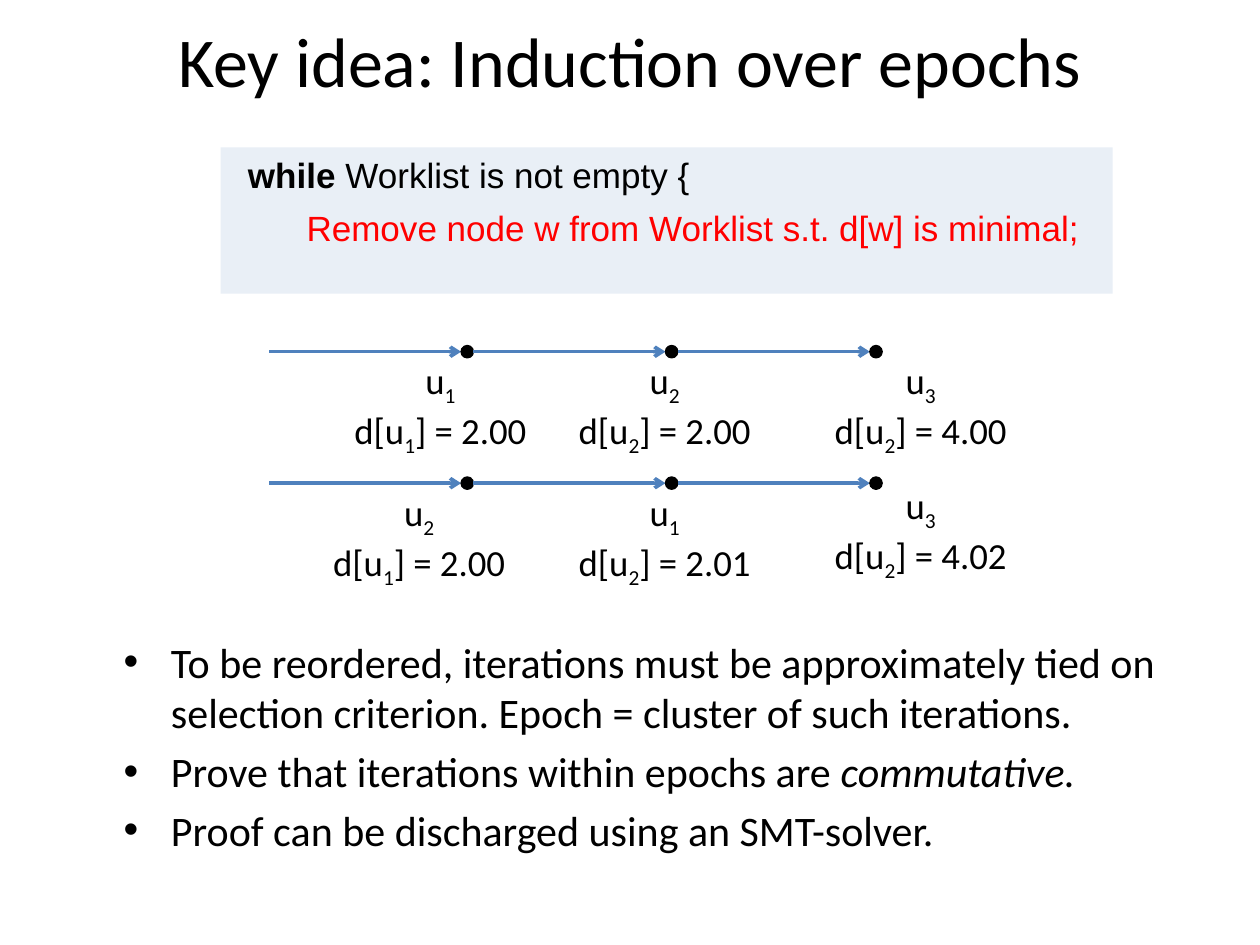
from dataclasses import dataclass
from typing import Any

from lxml import etree
from pptx import Presentation
from pptx import util as u
from pptx.dml import color as c
from pptx.enum import shapes as kinds
from pptx.enum import text as t
from pptx.oxml import ns

BLACK = c.RGBColor(0x00, 0x00, 0x00)
RED = c.RGBColor(0xFF, 0x00, 0x00)
BLUE = c.RGBColor(0x4F, 0x81, 0xBD)
PALE_BLUE = c.RGBColor(0xDC, 0xE6, 0xF2)

FIRST_NODE = 9.42
NODE_PITCH = 4.12
DOT_SIZE = 0.25
LABEL_WIDTH = 4.04
LABEL_HEIGHT = 2.06


@dataclass(frozen=True)
class Iteration:
    node: str
    distance_node: str
    distance: str
    left: float
    top: float


@dataclass(frozen=True)
class Epoch:
    axis: float
    iterations: tuple[Iteration, ...]


@dataclass(frozen=True)
class CodeLine:
    indent: float
    runs: tuple[tuple[str, dict[str, Any]], ...]


EPOCHS = (
    Epoch(7.09, (
        Iteration("1", "1", "2.00", 6.86, 7.09),
        Iteration("2", "2", "2.00", 11.38, 7.09),
        Iteration("3", "2", "4.00", 16.54, 7.09),
    )),
    Epoch(9.74, (
        Iteration("2", "1", "2.00", 6.43, 9.74),
        Iteration("1", "2", "2.01", 11.38, 9.74),
        Iteration("3", "2", "4.02", 16.54, 9.6),
    )),
)

CODE = (
    CodeLine(1.27, (("while ", {"bold": True}), ("Worklist is not empty {", {}))),
    CodeLine(2.45, (("Remove node w from Worklist s.t. d[w] is minimal;", {"color": RED}),)),
)

BULLETS = (
    (("To be reordered, iterations must be approximately tied on selection criterion. "
      "Epoch = cluster of such iterations.", {}),),
    (("Prove that iterations within epochs are ", {}), ("commutative.", {"italic": True})),
    (("Proof can be discharged using an SMT-solver.", {}),),
)


def apply_format(target: Any, values: dict[str, Any]) -> None:
    for name, value in values.items():
        setattr(target, name, value)


def place(shape: Any, left: float, top: float, width: float, height: float) -> None:
    box = {"left": left, "top": top, "width": width, "height": height}
    apply_format(shape, {name: u.Cm(value) for name, value in box.items()})


def add_run(paragraph: Any, content: str, font_name: str, size: float,
            color: c.RGBColor = BLACK, **extra: Any) -> Any:
    run = paragraph.add_run()
    run.text = content
    apply_format(run.font, {"name": font_name, "size": u.Pt(size), **extra})
    run.font.color.rgb = color
    return run


def next_paragraph(frame: Any, index: int) -> Any:
    return frame.paragraphs[0] if index == 0 else frame.add_paragraph()


def add_textbox(slide: Any, left: float, top: float, width: float, height: float,
                **frame_format: Any) -> Any:
    frame = slide.shapes.add_textbox(*map(u.Cm, (left, top, width, height))).text_frame
    apply_format(frame, frame_format)
    return frame


def add_filled(slide: Any, kind: Any, left: float, top: float, width: float,
               height: float, color: c.RGBColor) -> Any:
    shape = slide.shapes.add_shape(kind, *map(u.Cm, (left, top, width, height)))
    shape.shadow.inherit = False
    shape.fill.solid()
    shape.fill.fore_color.rgb = color
    return shape


def add_arrow(slide: Any, start: float, end: float, y: float) -> None:
    arrow = slide.shapes.add_connector(
        kinds.MSO_CONNECTOR.STRAIGHT, u.Cm(start), u.Cm(y), u.Cm(end), u.Cm(y))
    arrow.line.color.rgb = BLUE
    arrow.line.width = u.Pt(2)
    properties = arrow._element.spPr
    etree.SubElement(properties.find(ns.qn("a:ln")), ns.qn("a:tailEnd"), type="arrow")
    etree.SubElement(properties, ns.qn("a:effectLst"))


def add_dot(slide: Any, x: float, y: float) -> None:
    dot = add_filled(slide, kinds.MSO_SHAPE.OVAL, x - DOT_SIZE / 2, y - DOT_SIZE / 2,
                     DOT_SIZE, DOT_SIZE, BLACK)
    dot.line.color.rgb = BLACK
    dot.line.width = u.Pt(0.75)


def add_label(slide: Any, iteration: Iteration) -> None:
    frame = add_textbox(slide, iteration.left, iteration.top, LABEL_WIDTH, LABEL_HEIGHT,
                        word_wrap=False, auto_size=t.MSO_AUTO_SIZE.SHAPE_TO_FIT_TEXT)
    lines = (("u", iteration.node, ""),
             ("d[u", iteration.distance_node, f"] = {iteration.distance}"))
    for index, (before, subscript, after) in enumerate(lines):
        paragraph = next_paragraph(frame, index)
        paragraph.alignment = t.PP_ALIGN.CENTER
        add_run(paragraph, before, "Calibri", 21)
        lowered = add_run(paragraph, subscript, "Calibri", 21)
        lowered._r.get_or_add_rPr().set("baseline", "-25000")
        if after:
            add_run(paragraph, after, "Calibri", 21)


def add_epoch(slide: Any, epoch: Epoch) -> None:
    for index, iteration in enumerate(epoch.iterations):
        x = FIRST_NODE + index * NODE_PITCH
        add_arrow(slide, x - NODE_PITCH + DOT_SIZE / 2, x - DOT_SIZE / 2, epoch.axis)
        add_dot(slide, x, epoch.axis)
        add_label(slide, iteration)


def add_code(slide: Any) -> None:
    panel = add_filled(slide, kinds.MSO_SHAPE.RECTANGLE, 4.45, 2.97, 17.98, 2.95, PALE_BLUE)
    panel.line.fill.background()
    fill_color = panel._element.spPr.find(ns.qn("a:solidFill"))[0]
    etree.SubElement(fill_color, ns.qn("a:alpha"), val="62000")
    frame = add_textbox(slide, 3.48, 2.97, 21.92, 3.58, word_wrap=True)
    for index, line in enumerate(CODE):
        paragraph = next_paragraph(frame, index)
        paragraph.space_after = u.Pt(6)
        paragraph._p.get_or_add_pPr().set("marL", str(u.Cm(line.indent)))
        for content, font in line.runs:
            add_run(paragraph, content, "Arial", 20, **font)


def fill_placeholders(slide: Any) -> None:
    title, body = slide.shapes.title, slide.placeholders[1]
    place(title, 1.27, 0, 22.86, 2.41)
    add_run(title.text_frame.paragraphs[0], "Key idea: Induction over epochs", "Calibri", 40)
    place(body, 2.24, 12.7, 22.86, 4.01)
    body.text_frame.auto_size = t.MSO_AUTO_SIZE.NONE
    for index, runs in enumerate(BULLETS):
        paragraph = next_paragraph(body.text_frame, index)
        for content, font in runs:
            add_run(paragraph, content, "Calibri", 24, **font)


def main() -> None:
    presentation = Presentation()
    apply_format(presentation, {"slide_width": u.Cm(25.4), "slide_height": u.Cm(19.05)})
    slide = presentation.slides.add_slide(presentation.slide_layouts[1])
    fill_placeholders(slide)
    add_code(slide)
    for epoch in EPOCHS:
        add_epoch(slide, epoch)
    presentation.save("out.pptx")


if __name__ == "__main__":
    main()
